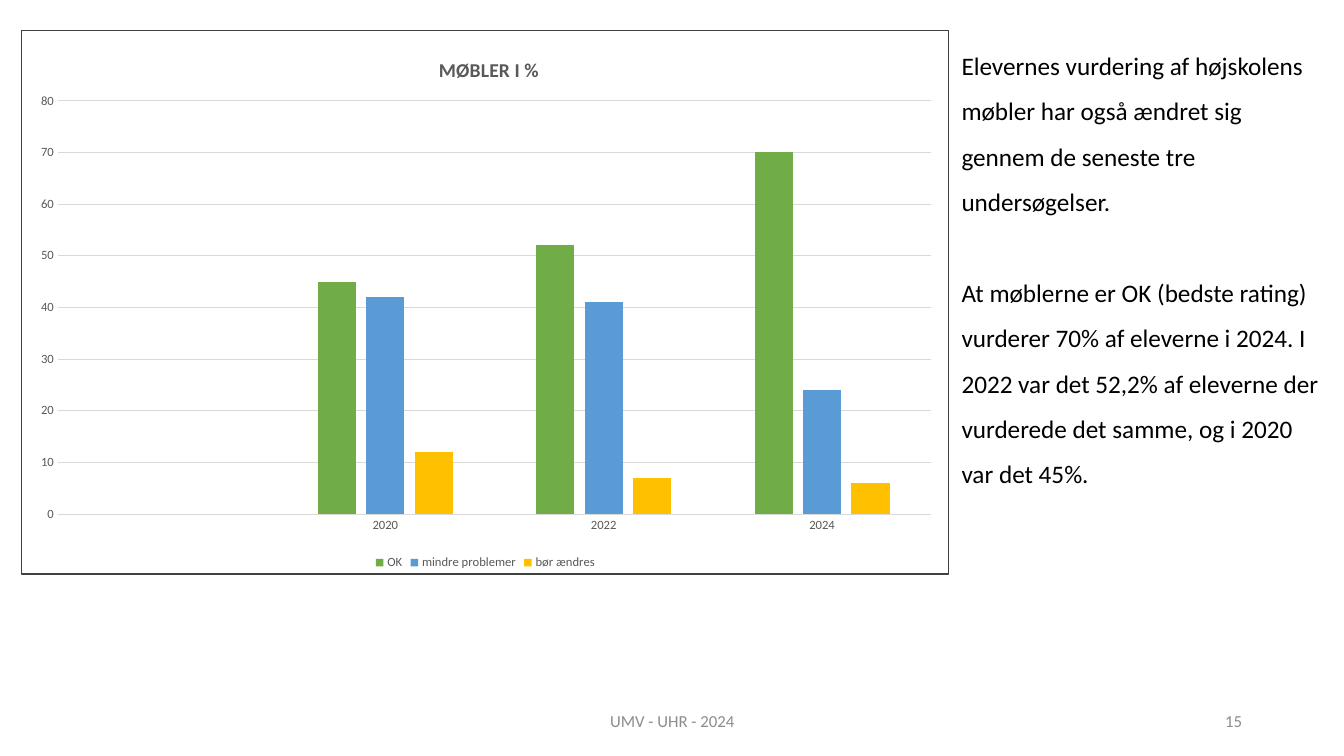
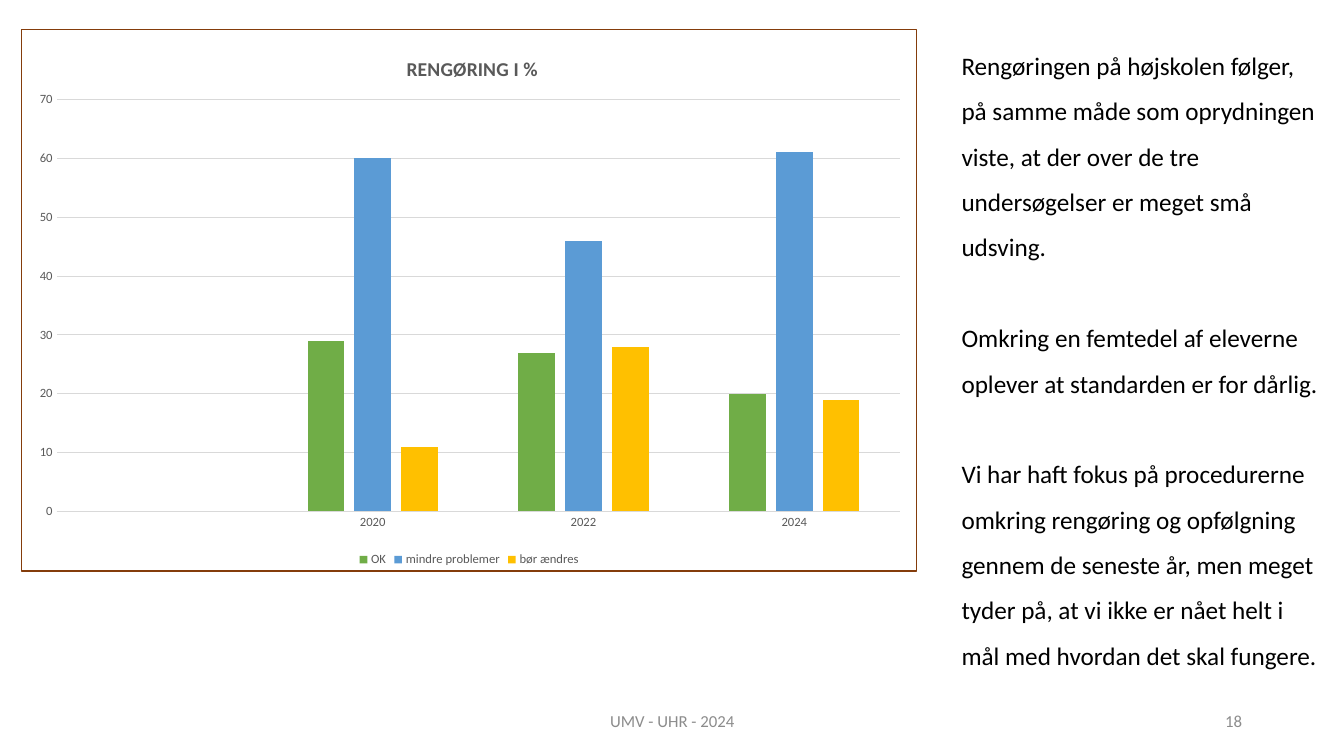
import pptx
import pptx.chart.data
import pptx.dml.color
import pptx.enum.chart
import pptx.enum.text
import pptx.oxml
import pptx.oxml.ns
import pptx.util

RGBColor = pptx.dml.color.RGBColor
BLACK = RGBColor(0x00, 0x00, 0x00)
FOOTER_GRAY = RGBColor(0x8C, 0x8C, 0x8C)
LABEL_GRAY = RGBColor(0x59, 0x59, 0x59)
GRID_GRAY = RGBColor(0xD9, 0xD9, 0xD9)
CHARCOAL = RGBColor(0x40, 0x40, 0x40)
BROWN = RGBColor(0x84, 0x3C, 0x0B)
GREEN = RGBColor(0x70, 0xAD, 0x47)
BLUE = RGBColor(0x5B, 0x9B, 0xD5)
YELLOW = RGBColor(0xFF, 0xC0, 0x00)

CELL = pptx.util.Inches(0.1)
COLUMNS, ROWS = 133.33, 75
FONT = "Calibri"
BODY = {"name": FONT, "size": pptx.util.Pt(18), "color": BLACK}
FOOTER = {"name": FONT, "size": pptx.util.Pt(12), "color": FOOTER_GRAY}
LABEL = {"name": FONT, "size": pptx.util.Pt(9), "color": LABEL_GRAY}
CHART_TITLE = {"name": FONT, "size": pptx.util.Pt(14), "bold": True, "color": LABEL_GRAY}
HAIRLINE = pptx.util.Pt(0.75)

YEARS = ["", "2020", "2022", "2024"]
RATINGS = {"OK": GREEN, "mindre problemer": BLUE, "bør ændres": YELLOW}
PLOT_LAYOUT = {"x": 0.039, "y": 0.129, "w": 0.942, "h": 0.761}

PAGES = [
    {
        "number": "15",
        "chart": {
            "title": "MØBLER I %",
            "title_left": 0.446,
            "area": (2.1, 3, 92.1, 54),
            "border": CHARCOAL,
            "maximum": 80,
            "values": [(45, 52, 70), (42, 41, 24), (12, 7, 6)],
        },
        "text_rows": 46,
        "paragraphs": [
            "Elevernes vurdering af højskolens møbler har også ændret sig "
            "gennem de seneste tre undersøgelser.",
            "At møblerne er OK (bedste rating) vurderer 70% af eleverne i 2024. "
            "I 2022 var det 52,2% af eleverne der vurderede det samme, "
            "og i 2020 var det 45%.",
        ],
    },
    {
        "number": "18",
        "chart": {
            "title": "RENGØRING I %",
            "title_left": 0.426,
            "area": (2.1, 2.9, 88.9, 53.8),
            "border": BROWN,
            "maximum": 70,
            "values": [(29, 27, 20), (60, 46, 61), (11, 28, 19)],
        },
        "text_rows": 64.2,
        "paragraphs": [
            "Rengøringen på højskolen følger, på samme måde som oprydningen viste, "
            "at der over de tre undersøgelser er meget små udsving.",
            "Omkring en femtedel af eleverne oplever at standarden er for dårlig.",
            "Vi har haft fokus på procedurerne omkring rengøring og opfølgning "
            "gennem de seneste år, men meget tyder på, at vi ikke er nået helt i "
            "mål med hvordan det skal fungere.",
        ],
    },
]


def grid(*cells):
    return [round(count * CELL) for count in cells]


def style_font(font, style):
    for name, value in style.items():
        if name == "color":
            font.color.rgb = value
        else:
            setattr(font, name, value)


def style_line(line, color):
    line.color.rgb = color
    line.width = HAIRLINE


def add_text(page, area, paragraphs, style, paragraph_format, gap=0,
             anchor=pptx.enum.text.MSO_ANCHOR.TOP):
    frame = page.shapes.add_textbox(*grid(*area)).text_frame
    frame.word_wrap = True
    frame.vertical_anchor = anchor
    for index, text in enumerate(paragraphs):
        para = frame.add_paragraph() if index else frame.paragraphs[0]
        for name, value in paragraph_format.items():
            setattr(para, name, value)
        if index and gap:
            para.space_before = pptx.util.Pt(gap)
        span = para.add_run()
        span.text = text
        style_font(span.font, style)


def add_footer(page, number):
    middle = pptx.enum.text.MSO_ANCHOR.MIDDLE
    align = pptx.enum.text.PP_ALIGN
    for left, width, text, alignment in (
        (44.2, 45, "UMV - UHR - 2024", align.CENTER),
        (94.2, 30, number, align.RIGHT),
    ):
        add_text(page, (left, 69.5, width, 4), [text], FOOTER,
                 {"alignment": alignment}, anchor=middle)


def set_layout(parent, index, shares, inner=False):
    for old in parent.xpath("./c:layout"):
        parent.remove(old)
    target = '<c:layoutTarget val="inner"/>' if inner else ""
    modes = "".join(f'<c:{side}Mode val="edge"/>' for side in "xy")
    lengths = "".join(f'<c:{name} val="{share}"/>' for name, share in shares.items())
    parent.insert(index, pptx.oxml.parse_xml(
        f'<c:layout {pptx.oxml.ns.nsdecls("c")}><c:manualLayout>'
        f"{target}{modes}{lengths}</c:manualLayout></c:layout>"))


def add_border(chart, color):
    chart.element.xpath("./c:chart")[0].addnext(pptx.oxml.parse_xml(
        f'<c:spPr {pptx.oxml.ns.nsdecls("c", "a")}><a:noFill/>'
        f'<a:ln w="{HAIRLINE}"><a:solidFill><a:srgbClr val="{color}"/>'
        "</a:solidFill></a:ln></c:spPr>"))


def style_axes(chart, maximum):
    for axis in (chart.category_axis, chart.value_axis):
        axis.major_tick_mark = pptx.enum.chart.XL_TICK_MARK.NONE
        axis.minor_tick_mark = pptx.enum.chart.XL_TICK_MARK.NONE
        style_font(axis.tick_labels.font, LABEL)
    style_line(chart.category_axis.format.line, GRID_GRAY)
    values = chart.value_axis
    values.minimum_scale, values.maximum_scale, values.major_unit = 0, maximum, 10
    values.format.line.fill.background()
    values.has_major_gridlines = True
    style_line(values.major_gridlines.format.line, GRID_GRAY)


def add_rating_chart(page, title, title_left, area, border, maximum, values):
    data = pptx.chart.data.CategoryChartData()
    data.categories = YEARS
    for rating, shares in zip(RATINGS, values):
        data.add_series(rating, (None, *shares))
    chart = page.shapes.add_chart(
        pptx.enum.chart.XL_CHART_TYPE.COLUMN_CLUSTERED, *grid(*area), data).chart
    style_font(chart.font, {**BODY, "size": pptx.util.Pt(10)})

    chart.has_title = True
    heading = chart.chart_title.text_frame
    heading.text = title
    style_font(heading.paragraphs[0].runs[0].font, CHART_TITLE)
    set_layout(chart.element.xpath(".//c:title")[0], 1, {"x": title_left, "y": 0.04})
    set_layout(chart.element.xpath(".//c:plotArea")[0], 0, PLOT_LAYOUT, inner=True)

    chart.has_legend = True
    chart.legend.position = pptx.enum.chart.XL_LEGEND_POSITION.BOTTOM
    chart.legend.include_in_layout = False
    style_font(chart.legend.font, LABEL)

    plot = chart.plots[0]
    plot.vary_by_categories = False
    plot.gap_width, plot.overlap = 219, -27
    for series, color in zip(plot.series, RATINGS.values()):
        series.format.fill.solid()
        series.format.fill.fore_color.rgb = color
    style_axes(chart, maximum)
    add_border(chart, border)


def main():
    deck = pptx.Presentation()
    deck.slide_width, deck.slide_height = grid(COLUMNS, ROWS)
    for content in PAGES:
        page = deck.slides.add_slide(deck.slide_layouts[6])
        add_footer(page, content["number"])
        add_rating_chart(page, **content["chart"])
        add_text(page, (94.4, 3, 37.9, content["text_rows"]), content["paragraphs"],
                 BODY, {"line_spacing": 1.5}, gap=32.4)
    deck.save("out.pptx")


if __name__ == "__main__":
    main()
